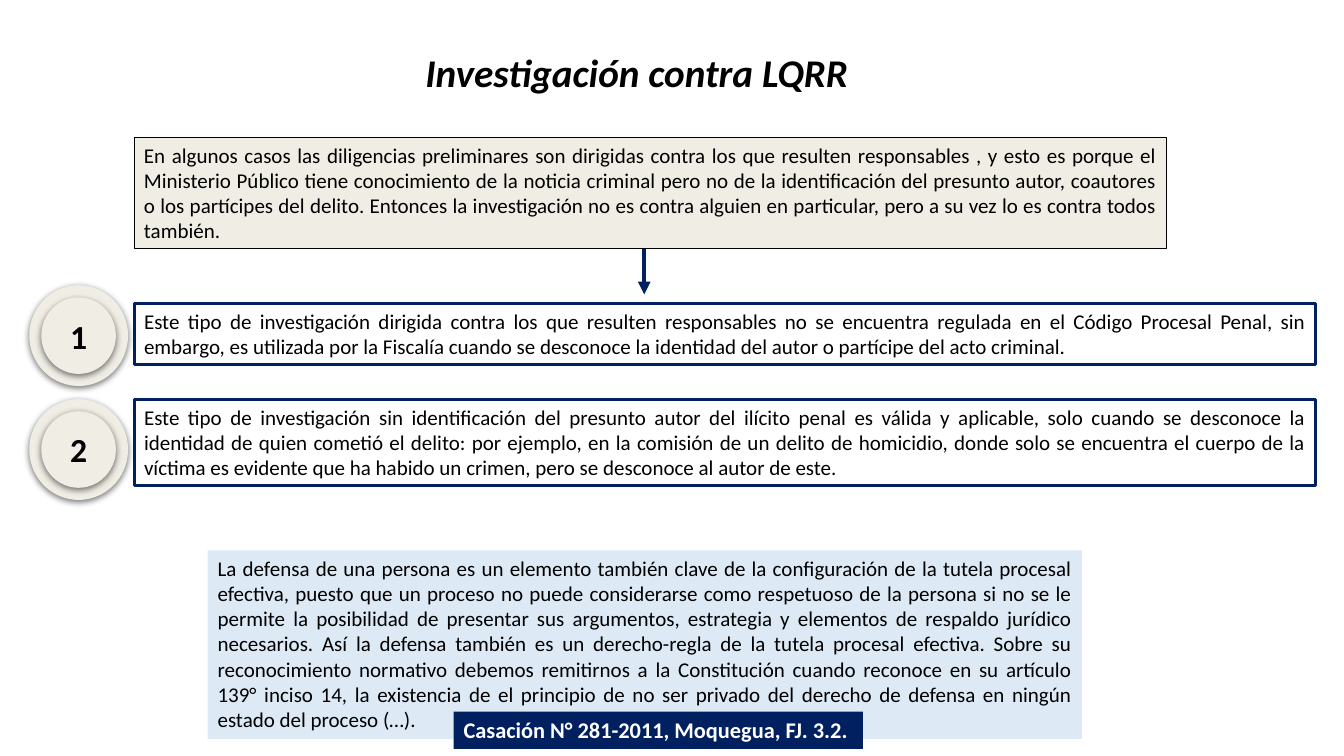
from lxml import etree
from pptx import Presentation, util as u
from pptx.dml.color import RGBColor
from pptx.enum import shapes, text
from pptx.oxml import ns

COLORS = {"black": "000000", "white": "FFFFFF", "navy": "002060",
          "cream": "F0EDE5", "sky": "DDEAF6"}


def rgb(name):
    return RGBColor.from_string(COLORS[name])


def add_box(left, top, width, height, words="", fill=None, line=None, weight=0.75,
            size=15, color="black", bold=False, align=text.PP_ALIGN.JUSTIFY,
            kind=shapes.MSO_SHAPE.RECTANGLE):
    sp = s.shapes.add_shape(kind, *map(u.Inches, (left, top, width, height)))
    sp.shadow.inherit = False
    if fill:
        sp.fill.solid()
        sp.fill.fore_color.rgb = rgb(fill)
    else:
        sp.fill.background()
    if line:
        sp.line.color.rgb = rgb(line)
        sp.line.width = u.Pt(weight)
    else:
        sp.line.fill.background()
    tf = sp.text_frame
    tf.word_wrap = True
    tf.vertical_anchor = text.MSO_ANCHOR.TOP
    p = tf.paragraphs[0]
    p.text = words
    p.alignment = align
    p.font.name, p.font.size, p.font.bold = "Calibri", u.Pt(size), bold
    p.font.color.rgb = rgb(color)
    return sp


prs = Presentation()
prs.slide_width, prs.slide_height = u.Inches(13.33), u.Inches(7.5)
s = prs.slides.add_slide(prs.slide_layouts[6])

# Title
title = add_box(4.12, 0.43, 4.45, 0.57, "Investigación contra LQRR", size=28,
                bold=True, align=text.PP_ALIGN.LEFT)
title.text_frame.paragraphs[0].font.italic = True

# Introduction
add_box(1.33, 1.36, 10.24, 1.11,
        "En algunos casos las diligencias preliminares son dirigidas contra los que "
        "resulten responsables , y esto es porque el Ministerio Público tiene "
        "conocimiento de la noticia criminal pero no de la identificación del presunto "
        "autor, coautores o los partícipes del delito. Entonces la investigación no es "
        "contra alguien en particular, pero a su vez lo es contra todos también.",
        fill="cream", line="black")

# Arrow down to the numbered points
arrow = s.shapes.add_connector(shapes.MSO_CONNECTOR.STRAIGHT, u.Inches(6.39),
                               u.Inches(2.47), u.Inches(6.39), u.Inches(2.92))
arrow.line.color.rgb = rgb("navy")
arrow.line.width = u.Pt(3)
etree.SubElement(arrow.line._get_or_add_ln(), ns.qn("a:tailEnd"), type="triangle")
etree.SubElement(arrow._element.spPr, ns.qn("a:effectLst"))

# Numbered points: text box, then badge of two shadowed discs
points = [
    (3.01, 0.61, 2.83,
     "Este tipo de investigación dirigida contra los que resulten responsables no se "
     "encuentra regulada en el Código Procesal Penal, sin embargo, es utilizada por la "
     "Fiscalía cuando se desconoce la identidad del autor o partícipe del acto criminal."),
    (3.96, 0.86, 3.96,
     "Este tipo de investigación sin identificación del presunto autor del ilícito penal "
     "es válida y aplicable, solo cuando se desconoce la identidad de quien cometió el "
     "delito: por ejemplo, en la comisión de un delito de homicidio, donde solo se "
     "encuentra el cuerpo de la víctima es evidente que ha habido un crimen, pero se "
     "desconoce al autor de este."),
]
for number, (top, height, badge_top, words) in enumerate(points, 1):
    add_box(1.33, top, 11.72, height, words, line="navy", weight=2.25)
    for inset, width, disc_height, label in ((0, 0.98, 1, ""),
                                             (0.12, 0.74, 0.76, str(number))):
        disc = add_box(0.29 + inset, badge_top + inset, width, disc_height, label,
                       fill="cream", size=24, bold=True, align=text.PP_ALIGN.CENTER,
                       kind=shapes.MSO_SHAPE.OVAL)
        tf = disc.text_frame
        tf.vertical_anchor = text.MSO_ANCHOR.MIDDLE
        tf.margin_left = tf.margin_right = tf.margin_top = tf.margin_bottom = 0
        effects = disc._element.spPr.find(ns.qn("a:effectLst"))
        shadow = etree.SubElement(effects, ns.qn("a:outerShdw"), blurRad=str(u.Pt(4.5)),
                                  dist=str(u.Pt(1.5)), dir="5400000", rotWithShape="0")
        tint = etree.SubElement(shadow, ns.qn("a:srgbClr"), val=COLORS["black"])
        etree.SubElement(tint, ns.qn("a:alpha"), val="50000")

# Quotation and its source
add_box(2.06, 5.46, 8.67, 1.87,
        "La defensa de una persona es un elemento también clave de la configuración de la "
        "tutela procesal efectiva, puesto que un proceso no puede considerarse como "
        "respetuoso de la persona si no se le permite la posibilidad de presentar sus "
        "argumentos, estrategia y elementos de respaldo jurídico necesarios. Así la defensa "
        "también es un derecho-regla de la tutela procesal efectiva. Sobre su "
        "reconocimiento normativo debemos remitirnos a la Constitución cuando reconoce en "
        "su artículo 139° inciso 14, la existencia de el principio de no ser privado del "
        "derecho de defensa en ningún estado del proceso (…).", fill="sky")
add_box(4.5, 7.06, 4.06, 0.37, "Casación N° 281-2011, Moquegua, FJ. 3.2.", fill="navy",
        size=16, color="white", bold=True, align=text.PP_ALIGN.LEFT)

prs.save("out.pptx")
